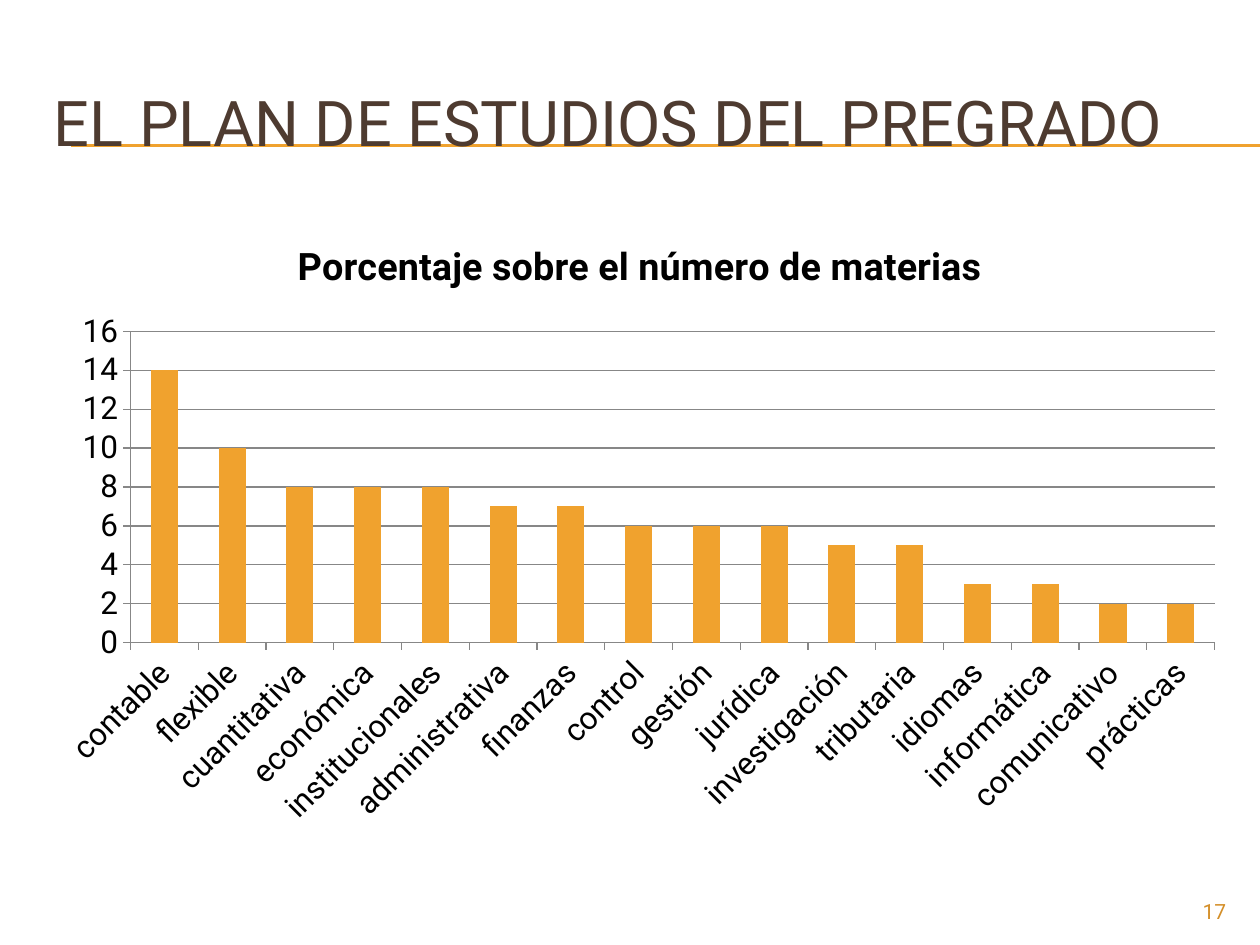
import dataclasses

import lxml.etree
import pptx
import pptx.chart.data
import pptx.dml.color
import pptx.enum.chart
import pptx.enum.text
import pptx.oxml.ns
import pptx.util

Inches = pptx.util.Inches
Pt = pptx.util.Pt
Color = pptx.dml.color.RGBColor.from_string
Align = pptx.enum.text.PP_ALIGN
Anchor = pptx.enum.text.MSO_ANCHOR


@dataclasses.dataclass(frozen=True)
class Theme:
    font: str = "Roboto"
    accent: str = "F0A22E"
    heading: str = "4E3B30"
    number: str = "D48F29"
    ink: str = "000000"
    grid: str = "878787"
    heading_size: float = 36
    chart_title_size: float = 21.6
    label_size: float = 18
    number_size: float = 12
    rule_width: float = 0.75


@dataclasses.dataclass(frozen=True)
class TextBlock:
    text: str
    place: tuple[float, float, float, float]
    size: float
    color: str
    align: Align
    anchor: Anchor


THEME = Theme()
CHART_TITLE = "Porcentaje sobre el número de materias"
SHARES = {
    "contable": 14, "flexible": 10, "cuantitativa": 8, "económica": 8,
    "institucionales": 8, "administrativa": 7, "finanzas": 7, "control": 6,
    "gestión": 6, "jurídica": 6, "investigación": 5, "tributaria": 5,
    "idiomas": 3, "informática": 3, "comunicativo": 2, "prácticas": 2,
}
RULE_HEIGHTS = (1.15, 1.16)
TEXTS = (
    TextBlock("EL PLAN DE ESTUDIOS DEL PREGRADO", (0.33, 0.5, 9.5, 0.92),
              THEME.heading_size, THEME.heading, Align.LEFT, Anchor.MIDDLE),
    TextBlock("17", (9, 7.08, 0.83, 0.27),
              THEME.number_size, THEME.number, Align.RIGHT, Anchor.TOP),
)


def apply(target, values: dict) -> None:
    for name, value in values.items():
        setattr(target, name, value)


def style_font(font, size: float, color: str, bold: bool = False) -> None:
    apply(font, {"name": THEME.font, "size": Pt(size), "bold": bold})
    font.color.rgb = Color(color)


def style_line(line, color: str) -> None:
    line.color.rgb = Color(color)
    line.width = Pt(THEME.rule_width)


def add_rule(page, top: float) -> None:
    rule = page.shapes.add_connector(
        pptx.enum.shapes.MSO_CONNECTOR.STRAIGHT,
        Inches(0.56), Inches(top), Inches(10), Inches(top))
    style_line(rule.line, THEME.accent)
    lxml.etree.SubElement(rule._element.spPr, pptx.oxml.ns.qn("a:effectLst"))


def add_text(page, block: TextBlock) -> None:
    box = page.shapes.add_textbox(*map(Inches, block.place))
    apply(box.text_frame, {"word_wrap": True, "vertical_anchor": block.anchor})
    para = box.text_frame.paragraphs[0]
    para.alignment = block.align
    span = para.add_run()
    span.text = block.text
    style_font(span.font, block.size, block.color)


def add_share_chart(page) -> None:
    data = pptx.chart.data.CategoryChartData()
    data.categories = list(SHARES)
    data.add_series(CHART_TITLE, list(SHARES.values()))
    chart = page.shapes.add_chart(
        pptx.enum.chart.XL_CHART_TYPE.COLUMN_CLUSTERED,
        *map(Inches, (0.33, 1.7, 9.5, 4.95)), data).chart
    apply(chart, {"has_legend": False, "has_title": True})
    style_font(chart.font, THEME.label_size, THEME.ink)

    title = chart.chart_title.text_frame
    title.text = CHART_TITLE
    style_font(title.paragraphs[0].runs[0].font,
               THEME.chart_title_size, THEME.ink, bold=True)

    plot = chart.plots[0]
    apply(plot, {"gap_width": 150, "vary_by_categories": False})
    fill = plot.series[0].format.fill
    fill.solid()
    fill.fore_color.rgb = Color(THEME.accent)

    for axis in (chart.category_axis, chart.value_axis):
        axis.major_tick_mark = pptx.enum.chart.XL_TICK_MARK.OUTSIDE
        style_line(axis.format.line, THEME.grid)
        style_font(axis.tick_labels.font, THEME.label_size, THEME.ink)
    slant = chart.category_axis._element.find(
        f"{pptx.oxml.ns.qn('c:txPr')}/{pptx.oxml.ns.qn('a:bodyPr')}")
    slant.set("rot", str(-45 * 60000))
    apply(chart.value_axis, {"minimum_scale": 0, "maximum_scale": 16,
                             "major_unit": 2, "has_major_gridlines": True})
    style_line(chart.value_axis.major_gridlines.format.line, THEME.grid)


def main() -> None:
    deck = pptx.Presentation()
    apply(deck, {"slide_width": Inches(10), "slide_height": Inches(7.5)})
    page = deck.slides.add_slide(deck.slide_layouts[6])
    for top in RULE_HEIGHTS:
        add_rule(page, top)
    heading, number = TEXTS
    add_text(page, heading)
    add_share_chart(page)
    add_text(page, number)
    deck.save("out.pptx")


if __name__ == "__main__":
    main()
